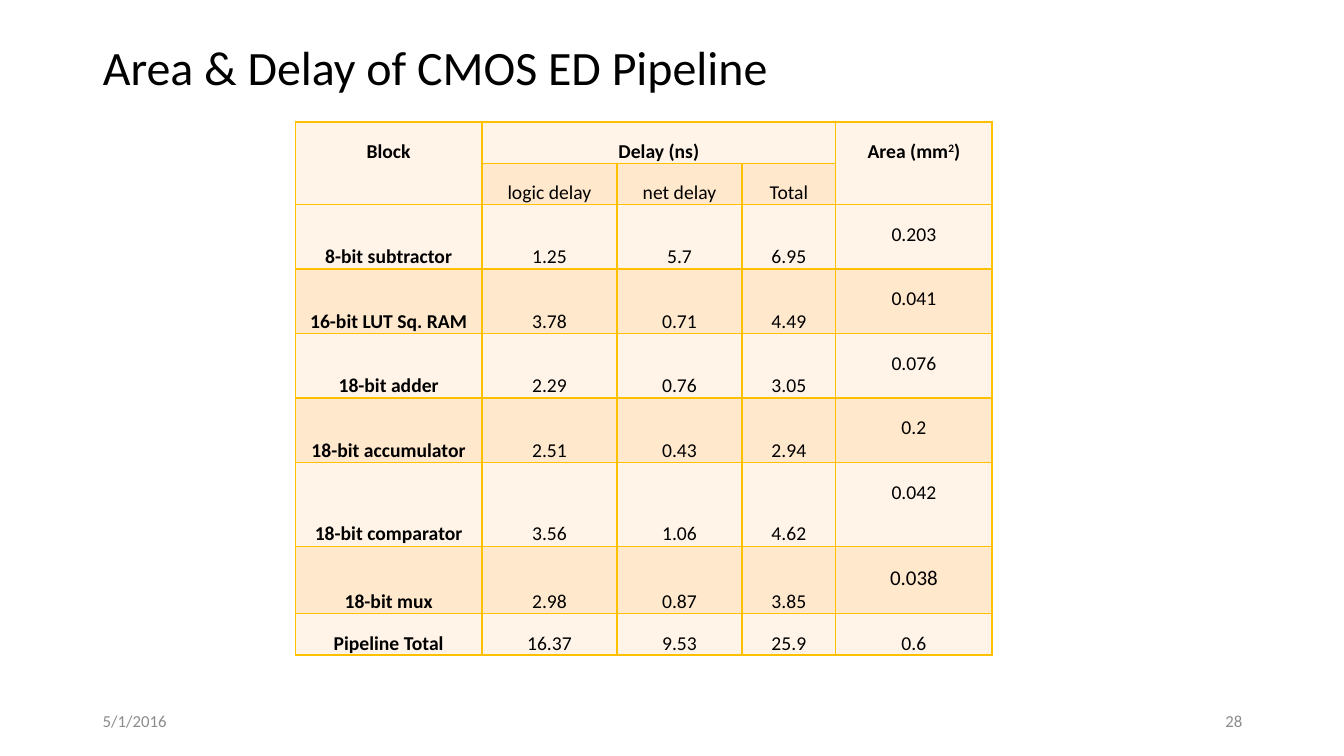
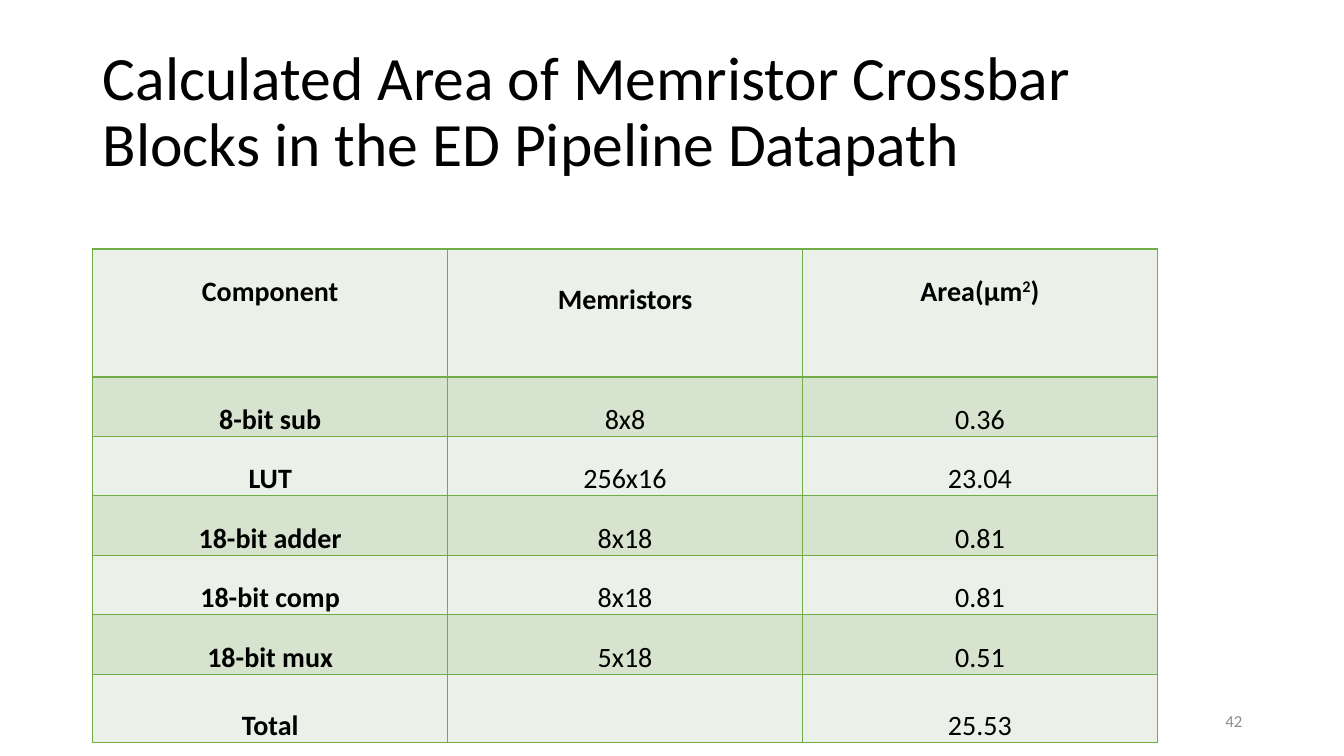
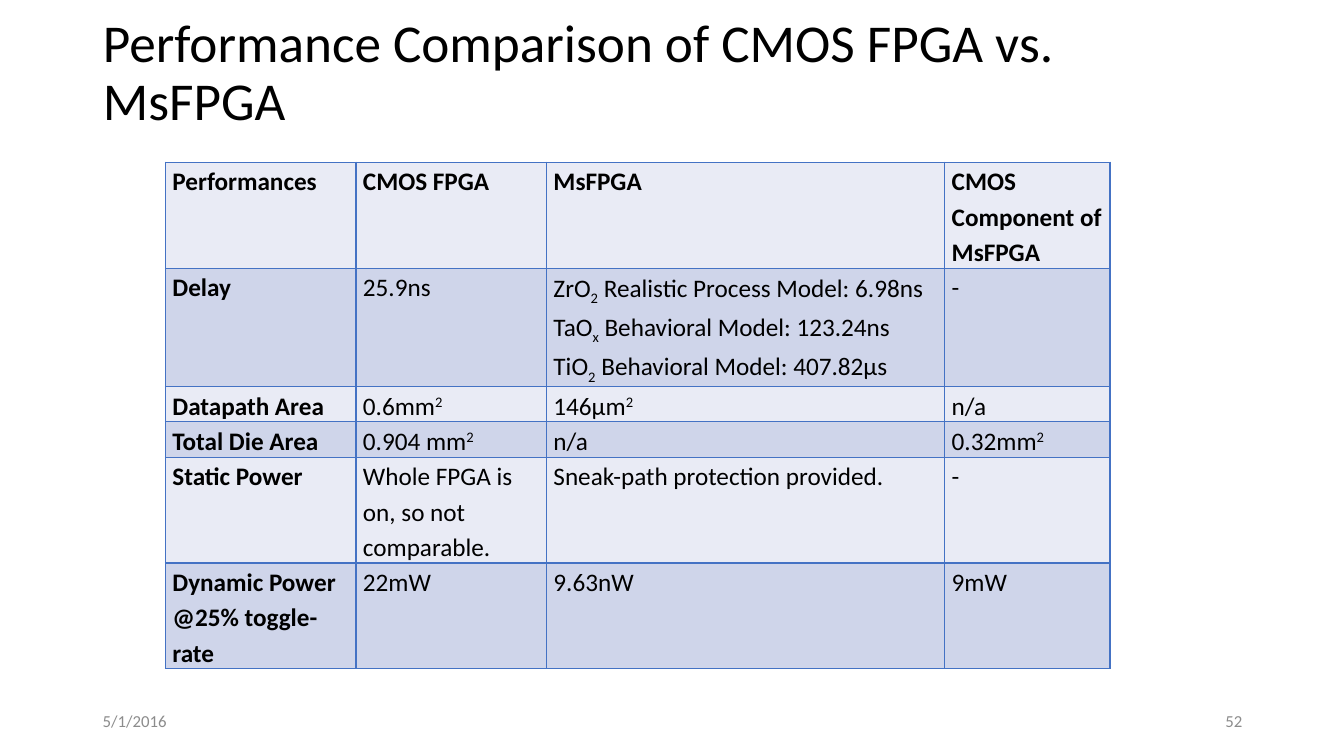
import pptx
import pptx.dml.color
import pptx.enum.text
import pptx.oxml.ns
import pptx.util
from lxml import etree

PX = 9144
ANCHOR = pptx.enum.text.MSO_ANCHOR
ALIGN = pptx.enum.text.PP_ALIGN


def px(n):
    return pptx.util.Emu(n * PX)


def rgb(value):
    return pptx.dml.color.RGBColor.from_string(value)


class Deck:
    """Holds the shared style and the current slide."""

    font = "Calibri"
    ink = "000000"
    muted = "8C8C8C"
    baselines = {"^": "30000", "~": "-25000"}

    def __init__(self):
        self.prs = pptx.Presentation()
        self.prs.slide_width, self.prs.slide_height = px(1333), px(750)
        self.s = None

    def style(self, r, size, color, bold=False):
        r.font.name = self.font
        r.font.size = pptx.util.Pt(size)
        r.font.bold = bold
        r.font.color.rgb = rgb(color)

    def slide(self, title, size, height, number, date=None):
        self.s = self.prs.slides.add_slide(self.prs.slide_layouts[5])
        self.title(title, size, height)
        if date:
            self.footer(date, 92, ALIGN.LEFT)
        self.footer(number, 942, ALIGN.RIGHT)

    def title(self, text, size, height):
        sp = self.s.shapes.title
        sp.left, sp.top, sp.width, sp.height = px(92), px(40), px(1150), px(height)
        tf = sp.text_frame
        tf.text = text
        tf.word_wrap = True
        tf.auto_size = pptx.enum.text.MSO_AUTO_SIZE.NONE
        tf.vertical_anchor = ANCHOR.MIDDLE
        p = tf.paragraphs[0]
        p.alignment = ALIGN.LEFT
        p.line_spacing = 0.9
        self.style(p.runs[0], size, self.ink)

    def footer(self, text, left, align):
        tf = self.s.shapes.add_textbox(px(left), px(695), px(300), px(40)).text_frame
        tf.text = text
        tf.word_wrap = True
        tf.vertical_anchor = ANCHOR.MIDDLE
        p = tf.paragraphs[0]
        p.alignment = align
        self.style(p.runs[0], 12, self.muted)

    def border(self, cell, color):
        tc_pr = cell._tc.get_or_add_tcPr()
        for side in ("lnL", "lnR", "lnT", "lnB"):
            ln = etree.SubElement(tc_pr, pptx.oxml.ns.qn("a:" + side), w="12700")
            fill = etree.SubElement(ln, pptx.oxml.ns.qn("a:solidFill"))
            etree.SubElement(fill, pptx.oxml.ns.qn("a:srgbClr"), val=color)

    def fill_text(self, cell, text, size, bold, align, spacing):
        tf = cell.text_frame
        for i, line in enumerate(text.split("\n")):
            p = tf.add_paragraph() if i else tf.paragraphs[0]
            p.alignment = align
            p.line_spacing = spacing
            for part in filter(None, line.split("|")):
                r = p.add_run()
                r.text = part.lstrip("^~")
                self.style(r, size, self.ink, bold)
                if part[0] in self.baselines:
                    r.font._element.set("baseline", self.baselines[part[0]])

    def table(self, left, top, cols, heights, rows, bands, line, size,
              align=ALIGN.CENTER, spacing=1.75, anchor=ANCHOR.BOTTOM):
        table = self.s.shapes.add_table(
            len(rows), len(cols), px(left), px(top), px(sum(cols)), px(sum(heights))).table
        table.first_row = table.horz_banding = False
        for col, width in zip(table.columns, cols):
            col.width = px(width)
        for i, (row, height) in enumerate(zip(rows, heights)):
            table.rows[i].height = px(height)
            for j, text in enumerate(row):
                cell = table.cell(i, j)
                cell.margin_left = cell.margin_right = px(7)
                cell.margin_top = cell.margin_bottom = 0
                cell.vertical_anchor = anchor
                self.border(cell, line)
                cell.fill.solid()
                cell.fill.fore_color.rgb = rgb(bands[i % 2])
                self.fill_text(cell, text, size, i == 0 or j == 0, align, spacing)
        return table


def cmos_area_delay(deck):
    deck.slide("Area & Delay of CMOS ED Pipeline", 34.2, 58, "28", "5/1/2016")
    rows = [
        ("Block", "Delay (ns)", "", "", "Area (mm|^2|)"),
        ("", "logic delay", "net delay", "Total", ""),
        ("8-bit subtractor", "1.25", "5.7", "6.95", "0.203"),
        ("16-bit LUT Sq. RAM", "3.78", "0.71", "4.49", "0.041"),
        ("18-bit adder", "2.29", "0.76", "3.05", "0.076"),
        ("18-bit accumulator", "2.51", "0.43", "2.94", "0.2"),
        ("18-bit comparator", "3.56", "1.06", "4.62", "0.042"),
        ("18-bit mux", "2.98", "0.87", "3.85", "0.038"),
        ("Pipeline Total", "16.37", "9.53", "25.9", "0.6"),
    ]
    table = deck.table(293, 121, [185, 134, 124, 93, 155],
                       [41, 41, 64, 64, 64, 64, 83, 67, 41],
                       rows, ("FFF4E7", "FFE8CC"), "FFC000", 14)
    for i in range(len(rows)):
        table.cell(i, 4).vertical_anchor = ANCHOR.TOP
    table.cell(0, 0).vertical_anchor = ANCHOR.TOP
    table.cell(7, 4).text_frame.paragraphs[0].runs[0].font.size = pptx.util.Pt(15)
    table.cell(0, 0).merge(table.cell(1, 0))
    table.cell(0, 1).merge(table.cell(0, 3))
    table.cell(0, 4).merge(table.cell(1, 4))


def memristor_area(deck):
    deck.slide("Calculated Area of Memristor Crossbar Blocks in the ED Pipeline Datapath",
               44, 145, "42")
    rows = [
        ("Component", "Memristors", "Area(µm|^2|)"),
        ("8-bit sub", "8x8", "0.36"),
        ("LUT", "256x16", "23.04"),
        ("18-bit adder", "8x18", "0.81"),
        ("18-bit comp", "8x18", "0.81"),
        ("18-bit mux", "5x18", "0.51"),
        ("Total", "", "25.53"),
    ]
    table = deck.table(92, 247, [352] * 3, [127] + [59] * 5 + [68],
                       rows, ("EBF1E9", "D5E3CF"), "70AD47", 20)
    for j in range(3):
        table.cell(0, j).vertical_anchor = ANCHOR.TOP
    table.cell(0, 1).text_frame.paragraphs[0].line_spacing = 2.0


def performance(deck):
    deck.slide("Performance Comparison of CMOS FPGA vs. MsFPGA", 38, 67, "52", "5/1/2016")
    models = ("ZrO|~2| Realistic Process Model: 6.98ns\n"
              "TaO|~x| Behavioral Model: 123.24ns\n"
              "TiO|~2| Behavioral Model: 407.82µs")
    rows = [
        ("Performances", "CMOS FPGA", "MsFPGA", "CMOS Component of MsFPGA"),
        ("Delay", "25.9ns", models, "-"),
        ("Datapath Area", "0.6mm|^2", "146µm|^2", "n/a"),
        ("Total Die Area", "0.904 mm|^2", "n/a", "0.32mm|^2"),
        ("Static Power", "Whole FPGA is on, so not comparable.",
         "Sneak-path protection provided.", "-"),
        ("Dynamic Power @25% toggle-rate", "22mW", "9.63nW", "9mW"),
    ]
    deck.table(164, 161, [189, 189, 395, 164], [105, 116, 35, 35, 105, 105],
               rows, ("E9EBF5", "CFD5EA"), "4472C4", 18,
               ALIGN.LEFT, 1.15, ANCHOR.TOP)


def main():
    deck = Deck()
    cmos_area_delay(deck)
    memristor_area(deck)
    performance(deck)
    deck.prs.save("out.pptx")


if __name__ == "__main__":
    main()
